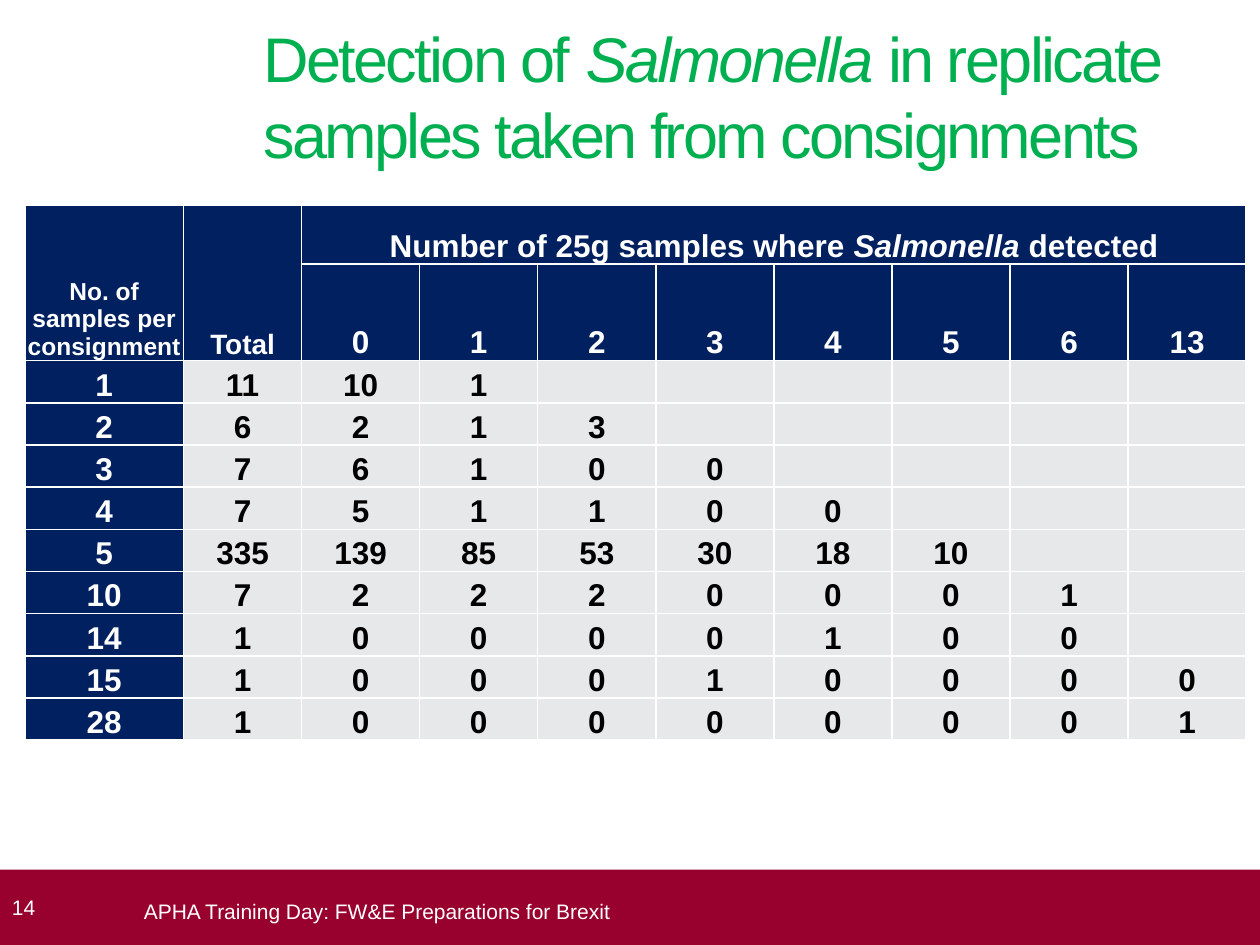
from dataclasses import dataclass

from lxml import etree
from pptx import Presentation
from pptx import util as u
from pptx.dml.color import RGBColor
from pptx.enum import shapes, text
from pptx.oxml import ns


@dataclass(frozen=True)
class Theme:
    font: str = "Arial"
    green: str = "00B050"
    navy: str = "002060"
    grey: str = "E7E8EA"
    crimson: str = "98002E"
    white: str = "FFFFFF"
    black: str = "000000"
    title_size: int = 36
    table_size: int = 18
    total_size: int = 16
    samples_size: int = 14
    footer_size: int = 12


THEME = Theme()
SPECIES = "Salmonella"
TITLE = "Detection of Salmonella in replicate samples taken from consignments"
PAGE = "14"
EVENT = "APHA Training Day: FW&E Preparations for Brexit"
SAMPLES = "No. of samples per consignment"
TOTAL = "Total"
DETECTED = "Number of 25g samples where Salmonella detected"
DETECTED_COUNTS = (0, 1, 2, 3, 4, 5, 6, 13)
CONSIGNMENTS = [
    (1, 11, 10, 1),
    (2, 6, 2, 1, 3),
    (3, 7, 6, 1, 0, 0),
    (4, 7, 5, 1, 1, 0, 0),
    (5, 335, 139, 85, 53, 30, 18, 10),
    (10, 7, 2, 2, 2, 0, 0, 0, 1),
    (14, 1, 0, 0, 0, 0, 1, 0, 0),
    (15, 1, 0, 0, 0, 1, 0, 0, 0, 0),
    (28, 1, 0, 0, 0, 0, 0, 0, 0, 1),
]
COLUMN_WIDTHS = [3.2] + [2.38] * (1 + len(DETECTED_COUNTS))
ROW_HEIGHTS = [1.19, 1.95] + [0.85] * len(CONSIGNMENTS)


def color(code):
    return RGBColor.from_string(code)


def write(frame, words, size, ink, bold=False):
    paragraph = frame.paragraphs[0]
    before, species, after = words.partition(SPECIES)
    paragraph.text = before
    for part in filter(None, (species, after)):
        paragraph.add_run().text = part
    for run in paragraph.runs:
        run.font.name, run.font.size = THEME.font, u.Pt(size)
        run.font.bold, run.font.italic = bold, run.text == SPECIES
        run.font.color.rgb = color(ink)
    return paragraph


def set_margins(holder, left=0, top=0, right=0, bottom=0):
    holder.margin_left, holder.margin_top = u.Cm(left), u.Cm(top)
    holder.margin_right, holder.margin_bottom = u.Cm(right), u.Cm(bottom)


def add_words(slide, box, words, size, ink, anchor, top_margin=0):
    frame = slide.shapes.add_textbox(*map(u.Cm, box)).text_frame
    frame.word_wrap, frame.vertical_anchor = True, anchor
    set_margins(frame, top=top_margin)
    return write(frame, words, size, ink)


def add_borders(cell):
    properties = cell._tc.get_or_add_tcPr()
    for index, side in enumerate(("lnL", "lnR", "lnT", "lnB")):
        line = etree.Element(ns.qn(f"a:{side}"), w=str(u.Pt(1)))
        fill = etree.SubElement(line, ns.qn("a:solidFill"))
        etree.SubElement(fill, ns.qn("a:srgbClr"), val=THEME.white)
        properties.insert(index, line)


def fill_cell(cell, words, heading, size):
    cell.fill.solid()
    cell.fill.fore_color.rgb = color(THEME.navy if heading else THEME.grey)
    cell.vertical_anchor = text.MSO_ANCHOR.BOTTOM
    set_margins(cell, 0.03, 0.03, 0.03)
    ink = THEME.white if heading else THEME.black
    write(cell.text_frame, words, size, ink, True).alignment = text.PP_ALIGN.CENTER
    add_borders(cell)


def add_detections(slide):
    rows = [(SAMPLES, TOTAL, DETECTED), ("", "", *DETECTED_COUNTS), *CONSIGNMENTS]
    sizes = {SAMPLES: THEME.samples_size, TOTAL: THEME.total_size}
    table = slide.shapes.add_table(
        len(rows), len(COLUMN_WIDTHS), u.Cm(0.5), u.Cm(4.13),
        u.Cm(sum(COLUMN_WIDTHS)), u.Cm(sum(ROW_HEIGHTS))).table
    table.first_row = table.horz_banding = False
    for column, width in zip(table.columns, COLUMN_WIDTHS):
        column.width = u.Cm(width)
    for row, height in zip(table.rows, ROW_HEIGHTS):
        row.height = u.Cm(height)
    for r, values in enumerate(rows):
        for c in range(len(COLUMN_WIDTHS)):
            words = str(values[c]) if c < len(values) else ""
            size = sizes.get(words, THEME.table_size)
            fill_cell(table.cell(r, c), words, r < 2 or c == 0, size)
    for start, end in (((0, 0), (1, 0)), ((0, 1), (1, 1)), ((0, 2), (0, 9))):
        table.cell(*start).merge(table.cell(*end))


def add_footer(slide):
    band = slide.shapes.add_shape(
        shapes.MSO_SHAPE.RECTANGLE, *map(u.Cm, (0, 17.53, 25.4, 1.52)))
    band.shadow.inherit = False
    band.fill.solid()
    band.fill.fore_color.rgb = color(THEME.crimson)
    band.line.fill.background()
    band.text_frame.vertical_anchor = text.MSO_ANCHOR.MIDDLE
    set_margins(band.text_frame, left=0.24, right=0.25)
    page = write(band.text_frame, PAGE, THEME.footer_size, THEME.white)
    page.alignment = text.PP_ALIGN.LEFT
    add_words(slide, (2.9, 17.6, 21.41, 1.52), EVENT, THEME.footer_size,
              THEME.white, text.MSO_ANCHOR.MIDDLE)


def main():
    """Build the slide on Salmonella detection in replicate samples."""
    deck = Presentation()
    deck.slide_width, deck.slide_height = u.Cm(25.4), u.Cm(19.05)
    slide = deck.slides.add_slide(deck.slide_layouts[6])
    title = add_words(slide, (5.31, 0.33, 19.41, 4.8), TITLE, THEME.title_size,
                      THEME.green, text.MSO_ANCHOR.TOP, 0.08)
    title.line_spacing = u.Pt(43)
    for run in title.runs:
        run.font._element.set("spc", "-150")
    add_detections(slide)
    add_footer(slide)
    deck.save("out.pptx")


if __name__ == "__main__":
    main()
